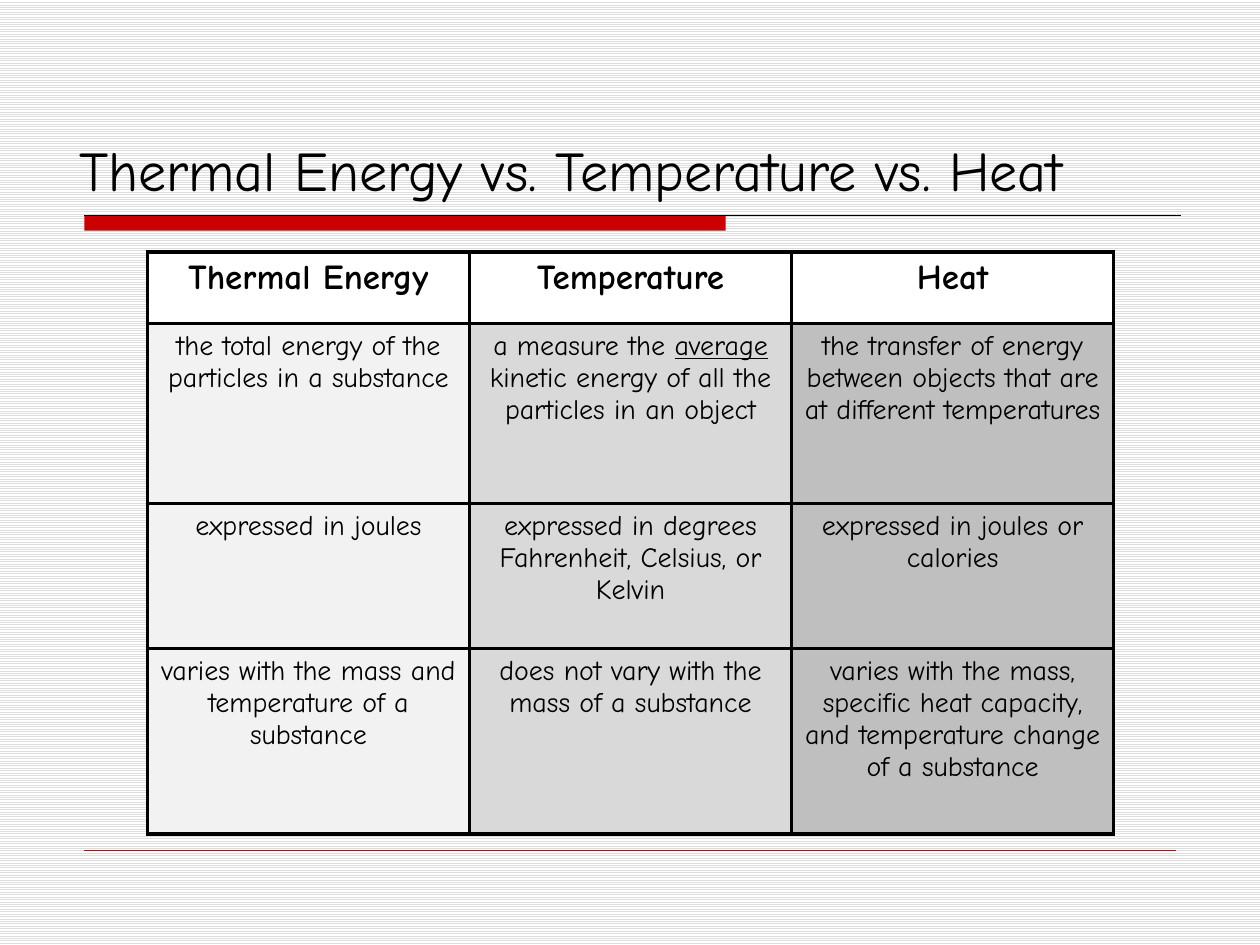
import pptx
import pptx.util
import pptx.dml.color
import pptx.enum.dml
import pptx.enum.shapes
import pptx.enum.text
import pptx.oxml
import pptx.oxml.ns
from pptx.util import Inches

RGBColor = pptx.dml.color.RGBColor
BLACK = RGBColor(0x00, 0x00, 0x00)
WHITE = RGBColor(0xFF, 0xFF, 0xFF)
STRIPE = RGBColor(0xDD, 0xDD, 0xDD)
RED = RGBColor(0xCC, 0x00, 0x00)
COLUMN_FILLS = [
    RGBColor(0xF2, 0xF2, 0xF2),
    RGBColor(0xD9, 0xD9, 0xD9),
    RGBColor(0xBF, 0xBF, 0xBF),
]
BORDER_WIDTH = pptx.util.Pt(2)
UNDERLINED = "average"

HEADINGS = ["Thermal Energy", "Temperature", "Heat"]
FACTS = [
    ["the total energy of the particles in a substance",
     "a measure the average kinetic energy of all the particles in an object",
     "the transfer of energy between objects that are at different temperatures"],
    ["expressed in joules",
     "expressed in degrees Fahrenheit, Celsius, or Kelvin",
     "expressed in joules or calories"],
    ["varies with the mass and temperature of a substance",
     "does not vary with the mass of a substance",
     "varies with the mass, specific heat capacity, and temperature change of a substance"],
]
ROW_HEIGHTS = [0.57, 1.43, 1.15, 1.47]


class SlideBuilder:
    """Holds the style and the current slide."""

    font_name = "Comic Neue"

    def __init__(self, page):
        self.page = page

    def background(self):
        fill = self.page.background.fill
        fill.patterned()
        fill.pattern = pptx.enum.dml.MSO_PATTERN.LIGHT_HORIZONTAL
        fill.fore_color.rgb = STRIPE
        fill.back_color.rgb = WHITE

    def style(self, paragraph, size, bold=False):
        font = paragraph.font
        font.name = self.font_name
        font.size = pptx.util.Pt(size)
        font.bold = bold
        font.color.rgb = BLACK

    def title(self, text, left, top, width, height):
        box = self.page.shapes.add_textbox(
            Inches(left), Inches(top), Inches(width), Inches(height))
        frame = box.text_frame
        frame.word_wrap = True
        frame.vertical_anchor = pptx.enum.text.MSO_ANCHOR.BOTTOM
        para = frame.paragraphs[0]
        para.text = text
        self.style(para, 32)

    def bar(self, left, top, width, height):
        bar = self.page.shapes.add_shape(
            pptx.enum.shapes.MSO_SHAPE.RECTANGLE,
            Inches(left), Inches(top), Inches(width), Inches(height))
        bar.shadow.inherit = False
        bar.fill.solid()
        bar.fill.fore_color.rgb = RED
        bar.line.fill.background()

    def rule(self, left, right, y, color, weight):
        rule = self.page.shapes.add_connector(
            pptx.enum.shapes.MSO_CONNECTOR.STRAIGHT,
            Inches(left), Inches(y), Inches(right), Inches(y))
        rule.line.color.rgb = color
        rule.line.width = pptx.util.Pt(weight)
        rule._element.spPr.append(pptx.oxml.parse_xml(
            f"<a:effectLst {pptx.oxml.ns.nsdecls('a')}/>"))

    def borders(self, cell):
        properties = cell._tc.get_or_add_tcPr()
        for index, side in enumerate(["lnL", "lnR", "lnT", "lnB"]):
            properties.insert(index, pptx.oxml.parse_xml(
                f"<a:{side} {pptx.oxml.ns.nsdecls('a')} w='{int(BORDER_WIDTH)}'>"
                f"<a:solidFill><a:srgbClr val='{BLACK}'/></a:solidFill></a:{side}>"))

    def cell(self, cell, text, size, fill, bold):
        cell.fill.solid()
        cell.fill.fore_color.rgb = fill
        self.borders(cell)
        para = cell.text_frame.paragraphs[0]
        para.alignment = pptx.enum.text.PP_ALIGN.CENTER
        self.style(para, size, bold)
        for part in text.partition(UNDERLINED):
            if part:
                span = para.add_run()
                span.text = part
                if part == UNDERLINED:
                    span.font.underline = True

    def table(self, rows, left, top, width, row_heights):
        count = len(rows[0])
        table = self.page.shapes.add_table(
            len(rows), count, Inches(left), Inches(top),
            Inches(width), Inches(sum(row_heights))).table
        for column in table.columns:
            column.width = Inches(width / count)
        for row_index, (texts, height) in enumerate(zip(rows, row_heights)):
            table.rows[row_index].height = Inches(height)
            heading = row_index == 0
            for column_index, text in enumerate(texts):
                self.cell(table.cell(row_index, column_index), text,
                          size=20 if heading else 16,
                          fill=WHITE if heading else COLUMN_FILLS[column_index],
                          bold=heading)


def main():
    deck = pptx.Presentation()
    deck.slide_width = Inches(10)
    deck.slide_height = Inches(7.5)
    builder = SlideBuilder(deck.slides.add_slide(deck.slide_layouts[6]))

    # Backdrop and rules
    builder.background()
    builder.bar(0.67, 1.71, 5.09, 0.12)
    builder.rule(0.67, 9.37, 1.71, BLACK, 0.75)
    builder.rule(0.67, 9.33, 6.75, RED, 0.25)

    # Title
    builder.title("Thermal Energy vs. Temperature vs. Heat", 0.53, 0.33, 8.87, 1.33)

    # Comparison table
    builder.table([HEADINGS] + FACTS, 1.17, 2, 7.67, ROW_HEIGHTS)

    deck.save("out.pptx")


if __name__ == "__main__":
    main()
